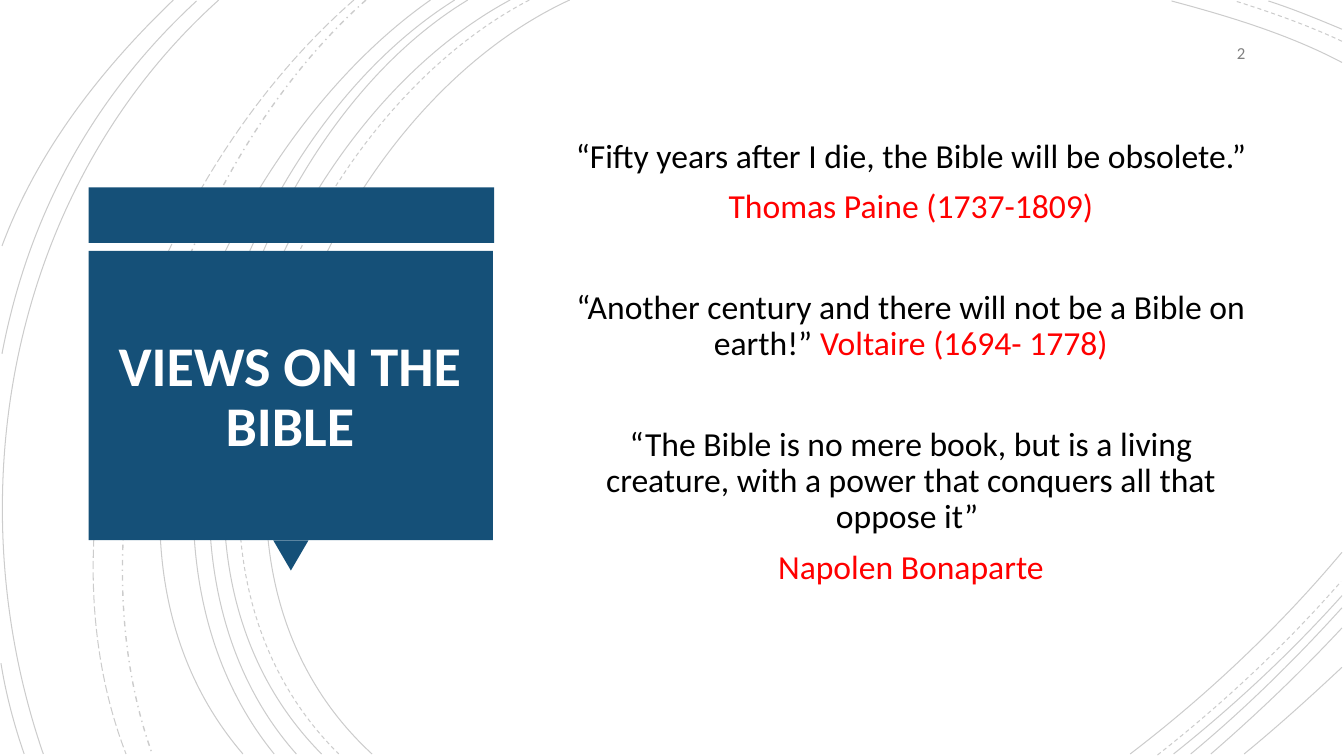
from lxml.etree import SubElement
from pptx import Presentation
from pptx.dml.color import RGBColor
from pptx.enum.dml import MSO_LINE_DASH_STYLE as DASH
from pptx.enum.shapes import MSO_SHAPE as SHAPE
from pptx.enum.text import MSO_ANCHOR as ANCHOR, PP_ALIGN as ALIGN
from pptx.oxml.ns import qn
from pptx.util import Inches, Pt

COLORS = {"white": "FFFFFF", "black": "000000", "blue": "155078",
          "red": "FF0000", "gray": "808080"}


def add_box(left, top, width, height):
    frame = slide.shapes.add_textbox(
        Inches(left), Inches(top), Inches(width), Inches(height)).text_frame
    frame.word_wrap = True
    frame.vertical_anchor = ANCHOR.MIDDLE
    return frame


def add_run(paragraph, text, size, color, bold=False):
    run = paragraph.add_run()
    run.text = text
    run.font.name = "Calibri"
    run.font.size = Pt(size)
    run.font.bold = bold
    run.font.color.rgb = RGBColor.from_string(COLORS[color])


deck = Presentation()
deck.slide_width = Inches(13.33)
deck.slide_height = Inches(7.5)
slide = deck.slides.add_slide(deck.slide_layouts[6])
slide.background.fill.solid()
slide.background.fill.fore_color.rgb = RGBColor.from_string(COLORS["white"])

arcs = {
    DASH.SOLID: [
        [(5.65, 0), (3.15, 1.15), (1.43, 5.4), (3.69, 7.48)],
        [(13.31, 0.62), (12.78, 0.34), (12.18, 0.16), (11.62, 0.01)],
        [(11.21, 7.48), (11.97, 6.9), (12.69, 6.22), (13.31, 5.48)],
        [(5.06, 0), (2.7, 1.27), (1.1, 5.37), (3.19, 7.48)],
        [(13.31, 0.29), (13.07, 0.19), (12.83, 0.09), (12.58, 0.01)],
        [(11.64, 7.48), (12.23, 7.01), (12.8, 6.48), (13.31, 5.91)],
        [(4.64, 0), (2.44, 1.33), (1.1, 5.41), (2.94, 7.48)],
        [(11.81, 7.48), (12.34, 7.04), (12.84, 6.55), (13.31, 6.03)],
        [(4.51, 0), (2.31, 1.38), (0.97, 5.33), (2.72, 7.48)],
        [(12.01, 7.48), (12.46, 7.09), (12.9, 6.67), (13.31, 6.23)],
        [(4.27, 0), (2.17, 1.47), (0.53, 5.29), (2.41, 7.48)],
        [(12.34, 7.48), (12.67, 7.21), (12.99, 6.92), (13.31, 6.62)],
        [(2.17, 0), (0.11, 1.85), (-0.46, 4.9), (0.43, 7.48)],
        [(1.95, 0.01), (0.92, 0.96), (0.28, 2.14), (0.02, 3.51)],
        [(0.01, 6.58), (0.06, 6.89), (0.14, 7.19), (0.24, 7.48)],
        [(1.72, 0), (1, 0.69), (0.37, 1.5), (0.02, 2.44)],
    ],
    DASH.DASH: [
        [(5.25, 0), (2.85, 1.25), (1.23, 5.37), (3.36, 7.48)],
        [(13.31, 0.41), (12.97, 0.25), (12.6, 0.12), (12.25, 0.01)],
        [(11.48, 7.49), (12.13, 6.98), (12.75, 6.4), (13.3, 5.77)],
    ],
    DASH.DASH_DOT: [[(3.63, 0), (1.76, 1.66), (0.65, 5.09), (1.51, 7.48)]],
    DASH.LONG_DASH: [[(3.51, 0), (1.57, 1.69), (0.29, 4.99), (1.25, 7.48)]],
}
arc_group = slide.shapes.add_group_shape()
for dash, curves in arcs.items():
    for curve in curves:
        points = [(Inches(x), Inches(y)) for x, y in curve]
        builder = arc_group.shapes.build_freeform(*points[0])
        builder.add_line_segments(points[1:], close=False)
        arc = builder.convert_to_shape()
        outline = next(arc.element.iter(qn("a:path")))
        segments = outline.findall(qn("a:lnTo"))
        bezier = SubElement(outline, qn("a:cubicBezTo"))
        for segment in segments:
            bezier.append(segment[0])
            outline.remove(segment)
        arc.shadow.inherit = False
        arc.fill.background()
        arc.line.width = Pt(1 if dash == DASH.DASH_DOT else 0.75)
        arc.line.color.rgb = RGBColor.from_string(COLORS["black"])
        arc.line.dash_style = dash
        ink = next(arc.element.iter(qn("a:ln"))).find(qn("a:solidFill"))[0]
        SubElement(ink, qn("a:alpha"), val="20000")

banner_parts = [
    (SHAPE.RECTANGLE, 0.88, 1.86, 4.02, 0.55, 0),
    (SHAPE.ISOSCELES_TRIANGLE, 2.71, 5.36, 0.35, 0.3, 180),
    (SHAPE.RECTANGLE, 0.88, 2.49, 4.01, 2.87, 0),
]
banner = slide.shapes.add_group_shape()
for kind, left, top, width, height, rotation in banner_parts:
    part = banner.shapes.add_shape(
        kind, Inches(left), Inches(top), Inches(width), Inches(height))
    part.rotation = rotation
    part.shadow.inherit = False
    part.fill.solid()
    part.fill.fore_color.rgb = RGBColor.from_string(COLORS["blue"])
    part.line.fill.background()

title = add_box(0.99, 2.64, 3.77, 2.62).paragraphs[0]
title.alignment = ALIGN.CENTER
title.line_spacing = 0.9
add_run(title, "VIEWS ON THE BIBLE", 40, "white", bold=True)

page_number = add_box(11.45, 0.35, 1, 0.35).paragraphs[0]
page_number.alignment = ALIGN.RIGHT
add_run(page_number, "2", 12, "gray")

quotes = [
    (0, [("“Fifty years after I die, the Bible will be obsolete.” ", "black")]),
    (10, [("Thomas Paine (1737-1809)", "red")]),
    (46, [("“Another century and there will not be a Bible on earth!” ", "black"),
          ("Voltaire (1694- 1778)", "red")]),
    (46, [("“The Bible is no mere book, but is a living creature, with a power "
           "that conquers all that oppose it” ", "black")]),
    (10, [("Napolen Bonaparte", "red")]),
]
quote_frame = add_box(5.6, 0.88, 6.87, 5.74)
quote_frame.margin_bottom = Inches(0.35)
for index, (gap, pieces) in enumerate(quotes):
    quote = quote_frame.add_paragraph() if index else quote_frame.paragraphs[0]
    quote.alignment = ALIGN.CENTER
    quote.line_spacing = 0.9
    quote.space_before = Pt(gap)
    for text, color in pieces:
        add_run(quote, text, 24, color)

deck.save("out.pptx")
